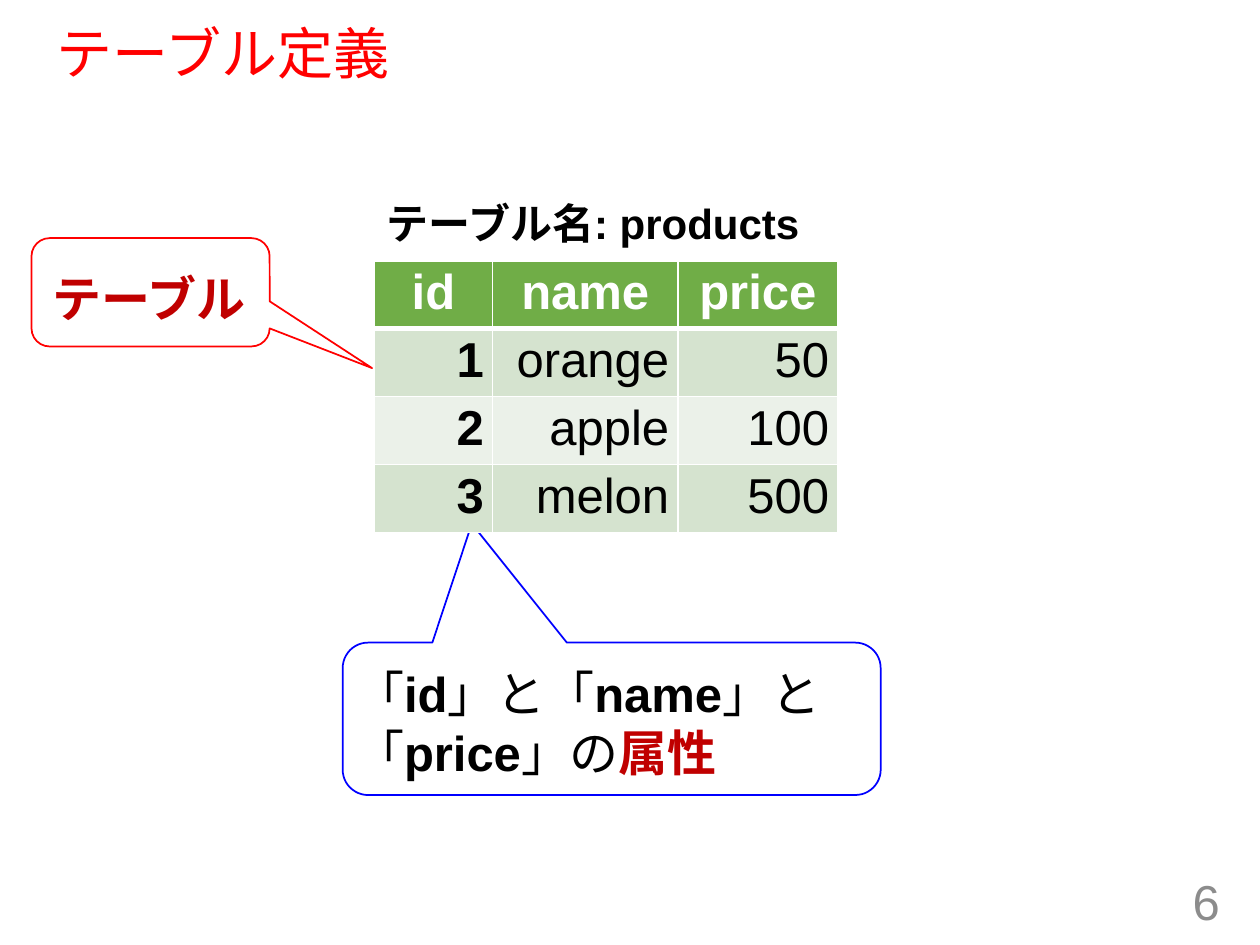
"""Build the slide that explains a table definition with two callouts."""
from lxml.etree import SubElement
from pptx import Presentation
from pptx.dml.color import RGBColor
from pptx.enum.shapes import MSO_SHAPE as Shape
from pptx.enum.text import MSO_ANCHOR as Anchor, PP_ALIGN as Align
from pptx.oxml.ns import qn
from pptx.util import Inches, Pt

WIDTH, HEIGHT = Inches(10), Inches(7.5)
COLUMNS, ROWS = 100, 75
FONT = "Arial"
BLACK = RGBColor(0x00, 0x00, 0x00)
WHITE = RGBColor(0xFF, 0xFF, 0xFF)
RED = RGBColor(0xFF, 0x00, 0x00)
BLUE = RGBColor(0x00, 0x00, 0xFF)
DARK_RED = RGBColor(0xC0, 0x00, 0x00)
GRAY = RGBColor(0x8C, 0x8C, 0x8C)
GREEN = RGBColor(0x70, 0xAD, 0x47)
BANDS = RGBColor(0xD5, 0xE3, 0xCF), RGBColor(0xEB, 0xF1, 0xE9)

PRODUCTS = [
    ("id", "name", "price"),
    ("1", "orange", "50"),
    ("2", "apple", "100"),
    ("3", "melon", "500"),
]


def across(columns):
    return int(WIDTH * columns / COLUMNS)


def down(rows):
    return int(HEIGHT * rows / ROWS)


def place(left, top, width, height):
    return across(left), down(top), across(width), down(height)


def style(run, size, color, bold=False):
    run.font.name = FONT
    run.font.size = Pt(size)
    run.font.bold = bold
    run.font.color.rgb = color


def add_text(slide, area, pieces, size, align=Align.LEFT, anchor=Anchor.TOP,
             spacing=None):
    frame = slide.shapes.add_textbox(*place(*area)).text_frame
    frame.word_wrap = True
    frame.vertical_anchor = anchor
    paragraph = frame.paragraphs[0]
    paragraph.alignment = align
    paragraph.line_spacing = spacing
    for words, color, bold in pieces:
        run = paragraph.add_run()
        run.text = words
        style(run, size, color, bold)


def add_callout(slide, area, color, pointer):
    callout = slide.shapes.add_shape(Shape.ROUNDED_RECTANGULAR_CALLOUT, *place(*area))
    callout.shadow.inherit = False
    callout.fill.background()
    callout.line.color.rgb = color
    callout.line.width = Pt(1)
    callout.adjustments[0], callout.adjustments[1] = pointer


def add_borders(cell, bottom):
    properties = cell._tc.get_or_add_tcPr()
    widths = {"a:lnL": 1, "a:lnR": 1, "a:lnT": 1, "a:lnB": bottom}
    for position, (side, width) in enumerate(widths.items()):
        border = SubElement(properties, qn(side), w=str(Pt(width)))
        fill = SubElement(border, qn("a:solidFill"))
        SubElement(fill, qn("a:srgbClr"), val=str(WHITE))
        properties.insert(position, border)


def fill_cell(cell, words, row, column):
    header = row == 0
    cell.text = words
    cell.margin_left = cell.margin_right = Inches(0.07)
    cell.margin_top = cell.margin_bottom = Pt(2.6)
    cell.fill.solid()
    cell.fill.fore_color.rgb = GREEN if header else BANDS[(row - 1) % 2]
    paragraph = cell.text_frame.paragraphs[0]
    paragraph.alignment = Align.CENTER if header else Align.RIGHT
    style(paragraph.runs[0], 28, WHITE if header else BLACK, header or column == 0)
    add_borders(cell, 3 if header else 1)


def add_products(slide, left, top, widths, row_height):
    area = place(left, top, sum(widths), row_height * len(PRODUCTS))
    table = slide.shapes.add_table(len(PRODUCTS), len(widths), *area).table
    for column, width in zip(table.columns, widths):
        column.width = across(width)
    for row, product in enumerate(PRODUCTS):
        table.rows[row].height = down(row_height)
        for column, words in enumerate(product):
            fill_cell(table.cell(row, column), words, row, column)


def main():
    deck = Presentation()
    deck.slide_width, deck.slide_height = WIDTH, HEIGHT
    slide = deck.slides.add_slide(deck.slide_layouts[6])

    add_text(slide, (3.5, 1.9, 92.5, 5.1), [("テーブル定義", RED, False)], 32,
             anchor=Anchor.MIDDLE, spacing=0.9)
    add_text(slide, (75.3, 69.5, 22.5, 4), [("6", GRAY, False)], 28,
             align=Align.RIGHT, anchor=Anchor.MIDDLE)

    add_callout(slide, (2.5, 18.9, 18.9, 8.6), RED, (0.93, 0.7))
    add_text(slide, (3.2, 20.8, 18, 4.5), [("テーブル", DARK_RED, True)], 28)

    add_callout(slide, (27.2, 51, 42.7, 12.1), BLUE, (-0.26, -1.28))
    attributes = [
        ("「", BLACK, False), ("id", BLACK, True),
        ("」と「", BLACK, False), ("name", BLACK, True),
        ("」と「", BLACK, False), ("price", BLACK, True),
        ("」の", BLACK, False), ("属性", DARK_RED, True),
    ]
    add_text(slide, (27.2, 52.2, 41.9, 8.1), attributes, 28)

    add_text(slide, (29.7, 15.2, 37, 5), [("テーブル名: products", BLACK, True)], 24)
    add_products(slide, 29.7, 20.7, (9.4, 14.7, 12.7), 4.8)
    deck.save("out.pptx")


if __name__ == "__main__":
    main()
